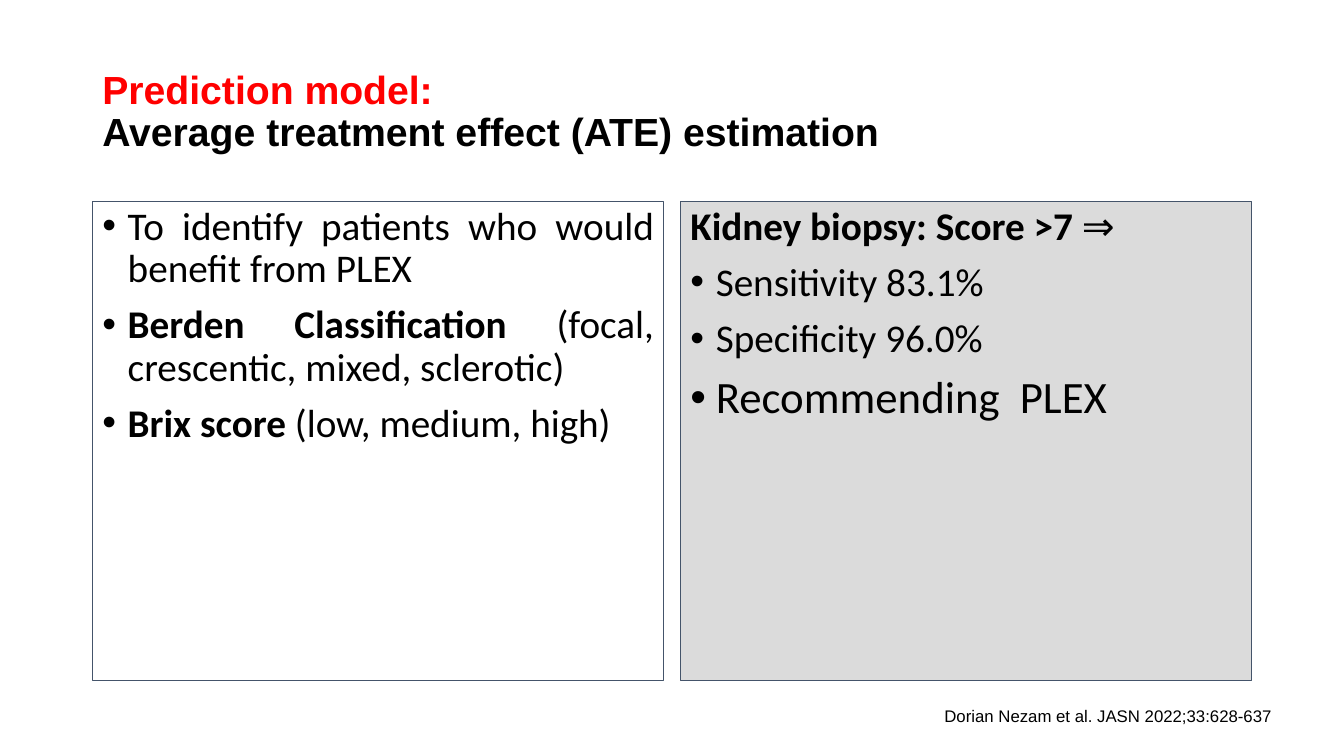
import pptx
import pptx.util
import pptx.dml.color
import pptx.enum.shapes
import pptx.enum.text
import pptx.oxml.ns
import lxml.etree

Cm, Pt = pptx.util.Cm, pptx.util.Pt
ALIGN = pptx.enum.text.PP_ALIGN
ANCHOR = pptx.enum.text.MSO_ANCHOR

COLORS = {"red": "FF0000", "black": "000000", "border": "44546A", "gray": "DBDBDB"}

# A run is (text, format values that differ from the base).
BOLD = {"bold": True}
TITLE = [
    ("Prediction model:", {"color": "red"}),
    ("Average treatment effect (ATE) estimation", {}),
]
# A panel is (fill, paragraphs); a paragraph is (bulleted, runs).
PANELS = [
    (None, [
        (True, [("To identify patients who would benefit from PLEX", {})]),
        (True, [("Berden Classification ", BOLD), ("(focal, crescentic, mixed, sclerotic)", {})]),
        (True, [("Brix score ", BOLD), ("(low, medium, high)", {})]),
    ]),
    ("gray", [
        (False, [("Kidney biopsy: Score >7 ", BOLD), ("⇒", {})]),
        (True, [("Sensitivity 83.1%", {})]),
        (True, [("Specificity 96.0%", {})]),
        (True, [("Recommending  PLEX", {"size": Pt(32)})]),
    ]),
]
CITATION = "Dorian Nezam et al. JASN 2022;33:628-637"

TITLE_FONT = {"name": "Arial", "size": Pt(28), "bold": True, "color": "black"}
BODY_FONT = {"name": "Calibri", "size": Pt(28), "bold": False, "color": "black"}
CITATION_FONT = {"name": "Arial", "size": Pt(12), "bold": False, "color": "black"}

LEFT, PANEL_TOP = Cm(2.33), Cm(5.07)
PANEL_W, PANEL_H, GAP = Cm(14.4), Cm(12.09), Cm(0.42)
INDENT = Cm(0.64)


def rgb(name):
    return pptx.dml.color.RGBColor.from_string(COLORS[name])


def set_values(obj, **values):
    for key, value in values.items():
        setattr(obj, key, value)


def add_run(p, text, font):
    r = p.add_run()
    r.text = text
    for key, value in font.items():
        if key == "color":
            r.font.color.rgb = rgb(value)
        else:
            setattr(r.font, key, value)


def add_bullet(p):
    pPr = p._p.get_or_add_pPr()
    pPr.set("marL", str(INDENT))
    pPr.set("indent", str(-INDENT))
    for tag, key, value in (("a:buFont", "typeface", "Arial"), ("a:buChar", "char", "•")):
        lxml.etree.SubElement(pPr, pptx.oxml.ns.qn(tag)).set(key, value)


def add_title(slide):
    sp = slide.shapes.add_textbox(LEFT, Cm(1.01), 2 * PANEL_W + GAP, Cm(3.68))
    tf = sp.text_frame
    set_values(tf, word_wrap=True, vertical_anchor=ANCHOR.MIDDLE)
    p = tf.paragraphs[0]
    p.line_spacing = 0.9
    for i, (text, changes) in enumerate(TITLE):
        if i:
            p.add_line_break()
        add_run(p, text, {**TITLE_FONT, **changes})


def add_panel(slide, column, fill, paragraphs):
    sp = slide.shapes.add_shape(
        pptx.enum.shapes.MSO_SHAPE.RECTANGLE,
        LEFT + column * (PANEL_W + GAP), PANEL_TOP, PANEL_W, PANEL_H)
    sp.shadow.inherit = False
    if fill:
        sp.fill.solid()
        sp.fill.fore_color.rgb = rgb(fill)
    else:
        sp.fill.background()
    sp.line.color.rgb = rgb("border")
    sp.line.width = Pt(0.75)
    tf = sp.text_frame
    set_values(tf, word_wrap=True, vertical_anchor=ANCHOR.TOP)
    for i, (bulleted, runs) in enumerate(paragraphs):
        p = tf.add_paragraph() if i else tf.paragraphs[0]
        set_values(p, alignment=ALIGN.JUSTIFY, line_spacing=0.9, space_before=Pt(10 if i else 0))
        if bulleted:
            add_bullet(p)
        for text, changes in runs:
            add_run(p, text, {**BODY_FONT, **changes})


def add_citation(slide):
    sp = slide.shapes.add_textbox(Cm(23.8), Cm(17.78), Cm(10), Cm(0.64))
    tf = sp.text_frame
    set_values(tf, word_wrap=True, margin_left=0, margin_right=0, margin_top=0, margin_bottom=0)
    add_run(tf.paragraphs[0], CITATION, CITATION_FONT)


def main():
    prs = pptx.Presentation()
    set_values(prs, slide_width=Cm(33.87), slide_height=Cm(19.05))
    slide = prs.slides.add_slide(prs.slide_layouts[6])
    add_title(slide)
    for column, (fill, paragraphs) in enumerate(PANELS):
        add_panel(slide, column, fill, paragraphs)
    add_citation(slide)
    prs.save("out.pptx")


if __name__ == "__main__":
    main()
